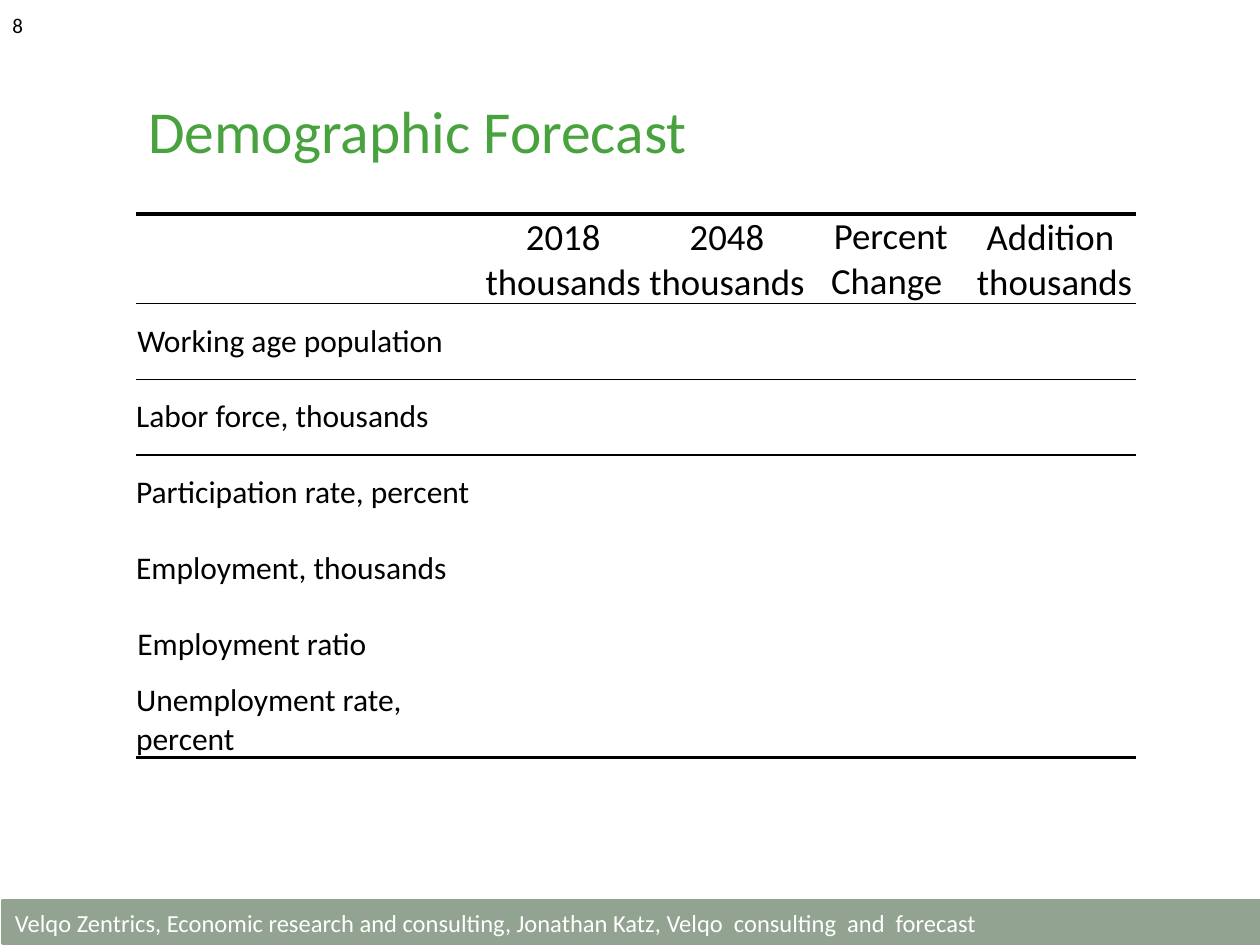
from lxml import etree
from pptx import Presentation
from pptx import util as u
from pptx.dml.color import RGBColor
from pptx.enum import shapes, text
from pptx.oxml import ns

COLORS = {"green": "48A23E", "sage": "92A391", "white": "FFFFFF", "black": "000000"}
FONT = "Calibri"
HEADERS = ["", "2018\nthousands", "2048\nthousands", "Percent Change ", "Addition \nthousands"]
LABELS = ["Working age population", "Labor force, thousands", "Participation rate, percent",
          "Employment, thousands", "Employment ratio", "Unemployment rate, percent"]
INSET_LABELS = {"Working age population", "Employment ratio"}
NO_GRID_STYLE = "{2D5ABB26-0587-4C30-8999-92F81FD0307C}"
# Rule widths in points: row -> {edge: width}
RULES = {0: {"T": 2.25, "B": 1}, 1: {"T": 1, "B": 1}, 2: {"T": 1}, 6: {"B": 2.25}}


def rgb(name):
    return RGBColor.from_string(COLORS[name])


def write(tf, content, size, color, align=text.PP_ALIGN.LEFT):
    tf.word_wrap = True
    tf.vertical_anchor = text.MSO_ANCHOR.MIDDLE
    tf.text = content
    for p in tf.paragraphs:
        p.alignment = align
        p.font.name = FONT
        p.font.size = u.Pt(size)
        p.font.color.rgb = rgb(color)


def add_text(slide, box, content, size, color):
    sp = slide.shapes.add_textbox(*map(u.Inches, box))
    write(sp.text_frame, content, size, color)


def add_footer(slide, box):
    sp = slide.shapes.add_shape(shapes.MSO_SHAPE.RECTANGLE, *map(u.Inches, box))
    sp.shadow.inherit = False
    sp.fill.solid()
    sp.fill.fore_color.rgb = rgb("sage")
    sp.line.color.rgb = rgb("sage")
    sp.line.width = u.Pt(2)
    write(sp.text_frame, "Velqo Zentrics, Economic research and consulting, Jonathan Katz, "
          "Velqo  consulting  and  forecast", 14, "white")


def add_rules(cell, rules):
    tcPr = cell._tc.get_or_add_tcPr()
    # Border lines come before the fill in the cell properties
    for i, (edge, width) in enumerate(rules.items()):
        ln = etree.Element(ns.qn(f"a:ln{edge}"), w=str(u.Pt(width)))
        fill = etree.SubElement(ln, ns.qn("a:solidFill"))
        etree.SubElement(fill, ns.qn("a:srgbClr"), val=COLORS["black"])
        tcPr.insert(i, ln)


def set_margins(cell, inset):
    cell.margin_left = cell.margin_right = cell.margin_top = u.Inches(inset)
    cell.margin_bottom = 0


def add_forecast_table(slide, box):
    rows, cols = len(LABELS) + 1, len(HEADERS)
    frame = slide.shapes.add_table(rows, cols, *map(u.Inches, box))
    table = frame.table
    table.first_row = table.horz_banding = False
    table._tbl.tblPr.find(ns.qn("a:tableStyleId")).text = NO_GRID_STYLE
    for i, col in enumerate(table.columns):
        col.width = u.Inches(1.3 if i else 2.74)
    for i, row in enumerate(table.rows):
        row.height = u.Inches(0.6 if i else 0.58)

    # Fills and rules
    for i in range(rows):
        for j in range(cols):
            cell = table.cell(i, j)
            if 1 <= i <= 4:
                cell.fill.solid()
                cell.fill.fore_color.rgb = rgb("white")
            else:
                cell.fill.background()
            add_rules(cell, RULES.get(i, {}))

    # Column headings
    for j, heading in enumerate(HEADERS[1:], 1):
        cell = table.cell(0, j)
        set_margins(cell, 0 if heading.startswith("Percent") else 0.01)
        write_cell(cell, heading, 21, text.PP_ALIGN.CENTER)

    # Row labels
    for i, label in enumerate(LABELS, 1):
        cell = table.cell(i, 0)
        set_margins(cell, 0.01 if label in INSET_LABELS else 0)
        write_cell(cell, label, 18, text.PP_ALIGN.LEFT)


def write_cell(cell, content, size, align):
    write(cell.text_frame, content, size, "black", align)
    cell.vertical_anchor = text.MSO_ANCHOR.MIDDLE


def main():
    prs = Presentation()
    prs.slide_width, prs.slide_height = u.Inches(10), u.Inches(7.5)
    s = prs.slides.add_slide(prs.slide_layouts[6])
    add_footer(s, (0.02, 7.15, 10.01, 0.34))
    add_text(s, (1.08, 0.43, 8.46, 1.2), "Demographic Forecast", 34, "green")
    add_text(s, (0, 0, 2.33, 0.4), "8", 12, "black")
    add_forecast_table(s, (1.08, 1.7, 7.94, 4.18))
    prs.save("out.pptx")


if __name__ == "__main__":
    main()
